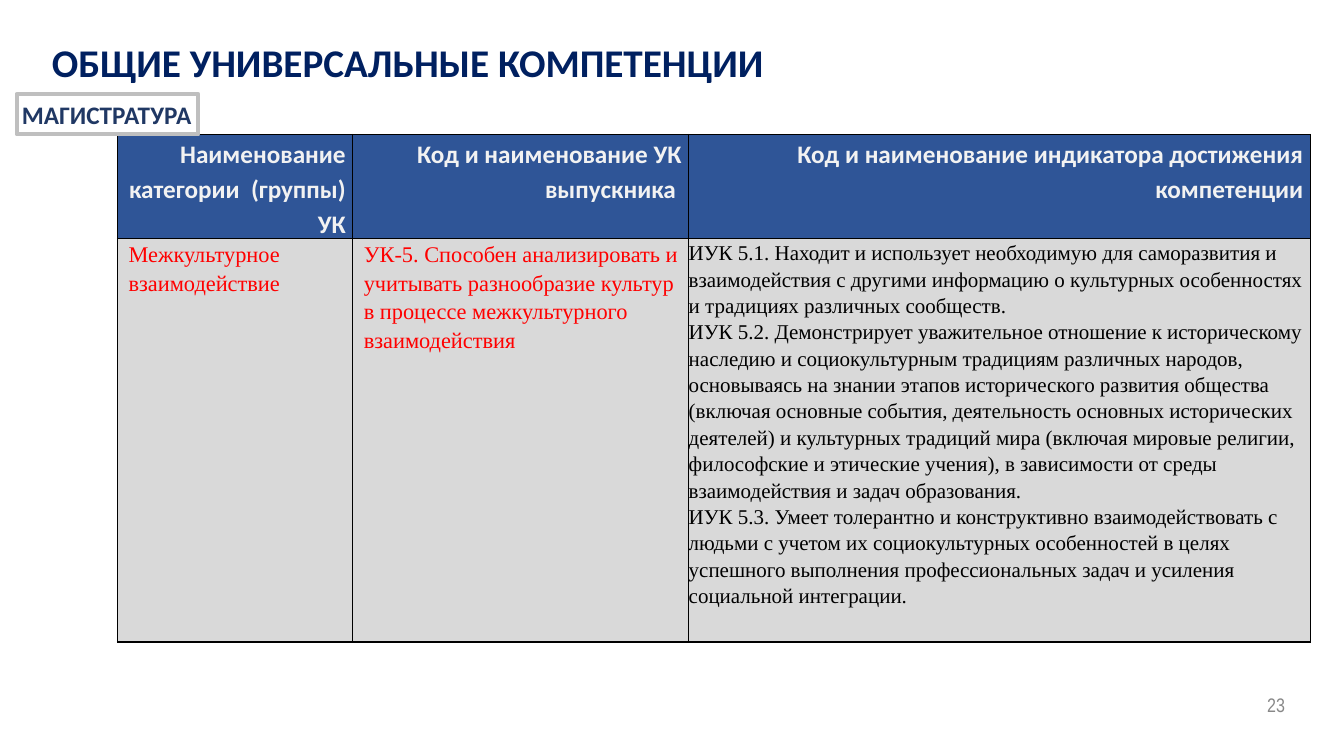
from lxml import etree
from pptx import Presentation
from pptx.dml.color import RGBColor
from pptx.enum.shapes import MSO_SHAPE
from pptx.enum.text import MSO_ANCHOR, PP_ALIGN
from pptx.oxml.ns import qn
from pptx.util import Inches, Pt

LEFT, RIGHT = PP_ALIGN.LEFT, PP_ALIGN.RIGHT
TOP, MIDDLE = MSO_ANCHOR.TOP, MSO_ANCHOR.MIDDLE
RECTANGLE = MSO_SHAPE.RECTANGLE

COLORS = {
    "title": "002060",
    "badge_text": "203864",
    "badge_line": "BFBFBF",
    "white": "FFFFFF",
    "header_fill": "2F5597",
    "header_text": "F2F2F2",
    "body_fill": "D9D9D9",
    "accent": "FF0000",
    "black": "000000",
    "number": "888888",
}
HEADING_FONT, BODY_FONT, NUMBER_FONT = "Calibri", "Times New Roman", "Arial Narrow"

# The slide is a grid of 80 columns by 45 rows, each a sixth of an inch.
GRID_COLUMNS, GRID_ROWS = 80, 45
COLUMN_SPANS = (14, 20, 37)
ROW_SPANS = (6.2, 24)
TABLE_LEFT, TABLE_TOP = 7, 8
CELL_MARGIN = 0.07

HEADERS = (
    "Наименование категории  (группы) УК",
    "Код и наименование УК выпускника ",
    "Код и наименование индикатора достижения компетенции",
)
CATEGORY = ("Межкультурное", "взаимодействие")
COMPETENCE = (
    "УК-5. Способен анализировать и учитывать разнообразие культур в процессе "
    "межкультурного взаимодействия",
)
INDICATORS = (
    "ИУК 5.1. Находит и использует необходимую для саморазвития и взаимодействия "
    "с другими информацию о культурных особенностях и традициях различных сообществ.",
    "ИУК 5.2. Демонстрирует уважительное отношение к историческому наследию и "
    "социокультурным традициям различных народов, основываясь на знании этапов "
    "исторического развития общества (включая основные события, деятельность основных "
    "исторических деятелей) и культурных традиций мира (включая мировые религии, "
    "философские и этические учения), в зависимости от среды взаимодействия и задач "
    "образования.",
    "ИУК 5.3. Умеет толерантно и конструктивно взаимодействовать с людьми с учетом их "
    "социокультурных особенностей в целях успешного выполнения профессиональных задач "
    "и усиления социальной интеграции.",
)


def grid(units):
    return Inches(units / 6)


def color(name):
    return RGBColor.from_string(COLORS[name])


def write_text(frame, lines, *, size, font, fill, bold=False, align=LEFT,
               spacing=1.0, indent=0):
    """Write one paragraph per line, all in the same format."""
    for index, line in enumerate(lines):
        paragraph = frame.paragraphs[0] if index == 0 else frame.add_paragraph()
        paragraph.alignment = align
        paragraph.line_spacing = spacing
        if indent:
            paragraph._p.get_or_add_pPr().set("marL", str(Inches(indent)))
        run = paragraph.add_run()
        run.text = line
        run.font.size = Pt(size)
        run.font.name = font
        run.font.bold = bold
        run.font.color.rgb = color(fill)


def set_frame(frame, horizontal, vertical, anchor=TOP, wrap=True):
    frame.margin_left = frame.margin_right = Inches(horizontal)
    frame.margin_top = frame.margin_bottom = Inches(vertical)
    frame.vertical_anchor = anchor
    frame.word_wrap = wrap


def add_label(slide, box, text, margins, anchor=TOP, **text_format):
    shape = slide.shapes.add_textbox(*map(grid, box))
    set_frame(shape.text_frame, *margins, anchor)
    write_text(shape.text_frame, [text], **text_format)


def add_badge(slide, box, text):
    shape = slide.shapes.add_shape(RECTANGLE, *map(grid, box))
    shape.shadow.inherit = False
    shape.fill.solid()
    shape.fill.fore_color.rgb = color("white")
    shape.line.color.rgb = color("badge_line")
    shape.line.width = Pt(3)
    set_frame(shape.text_frame, 0.05, 0.05, wrap=False)
    write_text(shape.text_frame, [text], size=18, font=HEADING_FONT,
               fill="badge_text", bold=True)


def add_borders(cell):
    properties = cell._tc.get_or_add_tcPr()
    for index, side in enumerate(("a:lnL", "a:lnR", "a:lnT", "a:lnB")):
        line = etree.Element(qn(side), w=str(Pt(1)))
        solid = etree.SubElement(line, qn("a:solidFill"))
        etree.SubElement(solid, qn("a:srgbClr"), val=COLORS["black"])
        properties.insert(index, line)


def fill_cell(cell, lines, fill_name, margin=CELL_MARGIN, **text_format):
    cell.fill.solid()
    cell.fill.fore_color.rgb = color(fill_name)
    cell.margin_left = cell.margin_right = Inches(margin)
    cell.margin_top = cell.margin_bottom = 0
    cell.vertical_anchor = TOP
    write_text(cell.text_frame, lines, **text_format)
    add_borders(cell)


def add_competence_table(slide):
    box = (TABLE_LEFT, TABLE_TOP, sum(COLUMN_SPANS), sum(ROW_SPANS))
    table = slide.shapes.add_table(
        len(ROW_SPANS), len(COLUMN_SPANS), *map(grid, box)).table
    for column, span in zip(table.columns, COLUMN_SPANS):
        column.width = grid(span)
    for row, span in zip(table.rows, ROW_SPANS):
        row.height = grid(span)

    for index, header in enumerate(HEADERS):
        fill_cell(table.cell(0, index), [header], "header_fill", size=18,
                  font=HEADING_FONT, fill="header_text", bold=True,
                  align=RIGHT, spacing=1.15)
    for index, lines in enumerate((CATEGORY, COMPETENCE)):
        fill_cell(table.cell(1, index), lines, "body_fill", size=16,
                  font=BODY_FONT, fill="accent", spacing=1.15, indent=0.04)
    fill_cell(table.cell(1, 2), INDICATORS, "body_fill", margin=0, size=15,
              font=BODY_FONT, fill="black", spacing=1.14)


def main():
    presentation = Presentation()
    presentation.slide_width = grid(GRID_COLUMNS)
    presentation.slide_height = grid(GRID_ROWS)
    slide = presentation.slides.add_slide(presentation.slide_layouts[6])

    add_label(slide, (2.5, 2, 72, 3.4), "ОБЩИЕ УНИВЕРСАЛЬНЫЕ КОМПЕТЕНЦИИ",
              (0.1, 0.05), size=28, font=HEADING_FONT, fill="title", bold=True)
    add_label(slide, (58.5, 41, 18, 1.9), "23", (0, 0), MIDDLE, size=14,
              font=NUMBER_FONT, fill="number", align=RIGHT)
    add_competence_table(slide)
    add_badge(slide, (1, 5.6, 10.8, 2.4), "МАГИСТРАТУРА")

    presentation.save("out.pptx")


if __name__ == "__main__":
    main()
